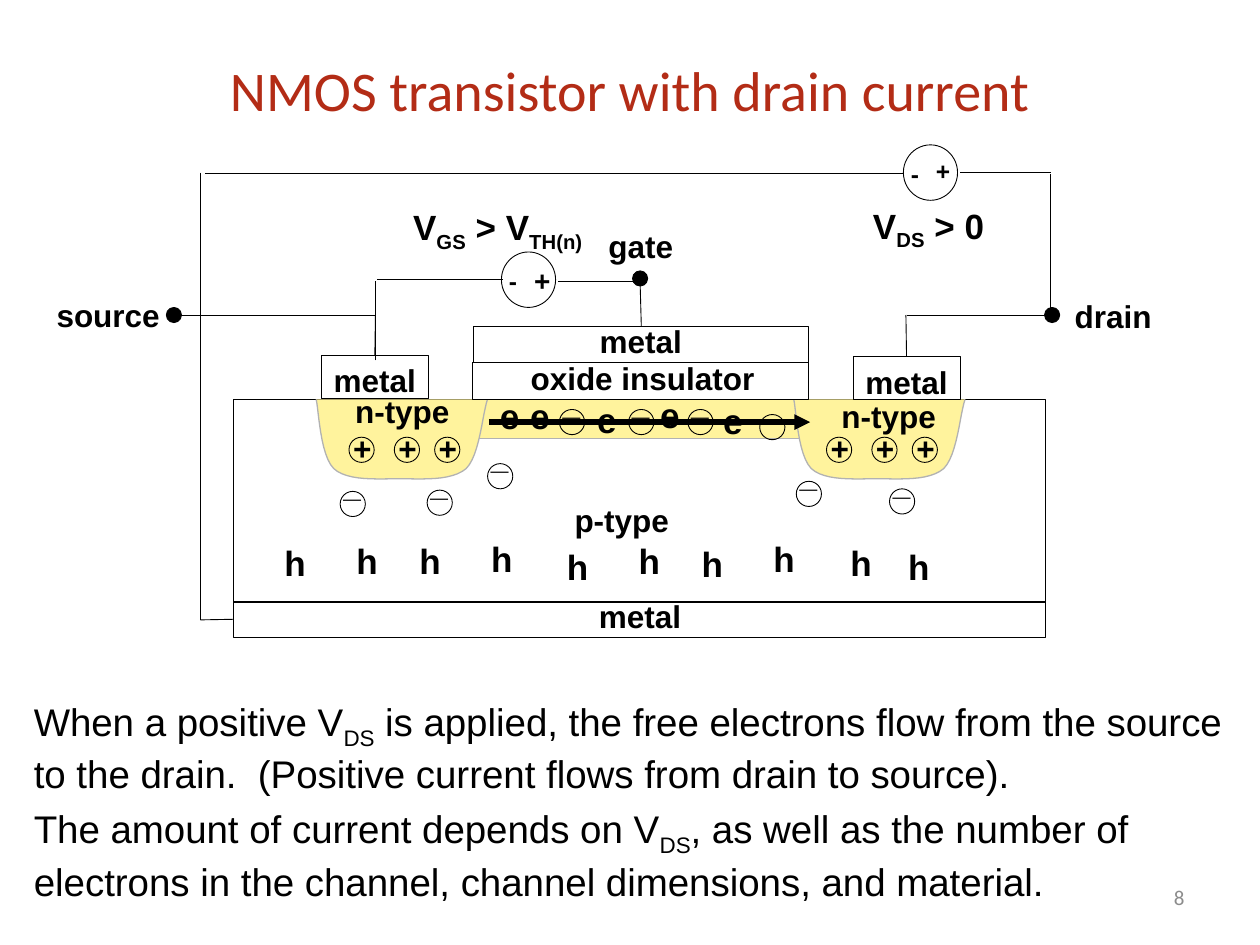
from dataclasses import dataclass

from lxml.etree import SubElement
from pptx import Presentation
from pptx.dml.color import RGBColor
from pptx.enum.shapes import MSO_CONNECTOR as Connector, MSO_SHAPE as Preset
from pptx.enum.text import MSO_ANCHOR as Anchor, PP_ALIGN as Align
from pptx.oxml.ns import qn
from pptx.util import Pt

PX = 9144  # EMU per px, 100 px to the inch


@dataclass(frozen=True)
class Theme:
    black: RGBColor = RGBColor(0, 0, 0)
    title: RGBColor = RGBColor(0xB3, 0x2C, 0x16)
    number: RGBColor = RGBColor(0x8C, 0x8C, 0x8C)
    n_region: RGBColor = RGBColor(0xFF, 0xF3, 0x9D)
    n_edge: RGBColor = RGBColor(0xB2, 0xB2, 0xB2)
    font: str = "Arial"
    heading_font: str = "Calibri"
    title_size: int = 32
    body_size: int = 22
    carrier_size: int = 20
    label_size: int = 18
    plus_size: int = 16
    sign_size: int = 14
    number_size: int = 12
    thin: float = 0.5
    edge: float = 0.75
    arrow: float = 3


theme = Theme()
presentation = Presentation()
presentation.slide_width = 1000 * PX
presentation.slide_height = 750 * PX
slide = presentation.slides.add_slide(presentation.slide_layouts[6])
shapes = slide.shapes


def add_text(text, left, top, width, height=40, size=theme.label_size, bold=True,
             color=theme.black, font=theme.font, align=Align.LEFT,
             anchor=Anchor.TOP, wrap=True, gap=0):
    """Add a text box; parts between ~ marks are subscripts, newlines split paragraphs."""
    frame = shapes.add_textbox(left * PX, top * PX, width * PX, height * PX).text_frame
    frame.word_wrap = wrap
    frame.vertical_anchor = anchor
    for row, content in enumerate(text.split("\n")):
        paragraph = frame.add_paragraph() if row else frame.paragraphs[0]
        paragraph.alignment = align
        paragraph.space_before = Pt(gap if row else 0)
        for index, part in enumerate(content.split("~")):
            run = paragraph.add_run()
            run.text = part
            run.font.name, run.font.size, run.font.bold = font, Pt(size), bold
            run.font.color.rgb = color
            if index % 2:
                run.font._element.set("baseline", "-25000")


def add_outline(preset, left, top, width, height, fill=None, line=theme.black):
    shape = shapes.add_shape(preset, left * PX, top * PX, width * PX, height * PX)
    shape.shadow.inherit = False
    if fill is None:
        shape.fill.background()
    else:
        shape.fill.solid()
        shape.fill.fore_color.rgb = fill
    shape.line.color.rgb = line
    shape.line.width = Pt(theme.thin)
    return shape


# Channel, substrate and the two n-type wells
add_outline(Preset.RECTANGLE, 378, 317, 272, 31, theme.n_region, theme.n_edge)
add_outline(Preset.RECTANGLE, 185, 317, 645, 161)

well_curves = [
    ((0, 0), (2, 8), (3, 44), (14, 55)),
    ((14, 55), (25, 65), (49, 63), (66, 63)),
    ((66, 63), (84, 63), (107, 65), (119, 55)),
    ((119, 55), (130, 44), (132, 11), (136, 0)),
]
STEPS = 12
for well_left in (251, 630):
    points = []
    for curve in well_curves:
        for step in range(1, STEPS + 1):
            t = step / STEPS
            weights = ((1 - t) ** 3, 3 * t * (1 - t) ** 2, 3 * t * t * (1 - t), t ** 3)
            x, y = (sum(w * p[axis] for w, p in zip(weights, curve)) for axis in (0, 1))
            points.append(((well_left + x) * PX, (317 + y) * PX))
    builder = shapes.build_freeform(well_left * PX, 317 * PX)
    builder.add_line_segments(points, close=False)
    well = builder.convert_to_shape()
    well.shadow.inherit = False
    well.fill.solid()
    well.fill.fore_color.rgb = theme.n_region
    well.line.color.rgb = theme.n_edge
    well.line.width = Pt(theme.edge)

# Contacts and layers
source_contact = add_outline(Preset.RECTANGLE, 255, 282, 85, 34)
drain_contact = add_outline(Preset.RECTANGLE, 677, 283, 85, 34)
add_outline(Preset.RECTANGLE, 375, 288, 267, 29)
gate_metal = add_outline(Preset.RECTANGLE, 376, 259, 266, 29)
body_metal = add_outline(Preset.RECTANGLE, 185, 477, 645, 29)

for label, left, top, width in [
    ("metal", 255, 282, 85), ("metal", 677, 283, 85), ("metal", 466, 251, 85),
    ("oxide insulator", 411, 280, 198), ("p-type", 446, 393, 95),
    ("metal", 443, 469, 130), ("gate", 459, 175, 99),
]:
    add_text(label, left, top, width, align=Align.CENTER, wrap=False)

for label, left, top, width in [
    ("n-type", 272, 306, 123), ("n-type", 658, 310, 123),
    ("source", 35, 230, 105), ("drain", 843, 231, 112),
]:
    add_text(label, left, top, width)

# Terminals
for left, top in [(829, 244), (132, 244), (502, 215)]:
    add_outline(Preset.OVAL, left, top, 12, 12, theme.black)

# Fixed ions: positive in the wells, negative in the substrate and channel
positive_ions = [(well + offset, 347) for well in (277, 656) for offset in (0, 36, 68)]
negative_ions = [(339, 389), (270, 390), (387, 368), (632, 382), (706, 388),
                 (603, 329), (444, 325), (499, 325), (546, 325)]
for sign, ions, shift, rise in [("+", positive_ions, 9, 11), ("_", negative_ions, 10, 25)]:
    for left, top in ions:
        add_outline(Preset.OVAL, left, top, 20, 20)
        add_text(sign, left - shift, top - rise, 39, align=Align.CENTER)

# Mobile carriers
holes = [(216, 425), (273, 423), (323, 423), (380, 422), (440, 428),
         (497, 423), (547, 426), (604, 422), (665, 425), (711, 428)]
electrons = [(387, 308), (411, 308), (464, 311), (514, 307), (564, 312)]
for letter, places in [("h", holes), ("e", electrons)]:
    for left, top in places:
        add_text(letter, left, top, 37, 43, size=theme.carrier_size, wrap=False)

# Voltage sources
for left, top, plus_top, plus_size in [(398, 200, 204, theme.plus_size),
                                       (717, 115, 119, theme.sign_size)]:
    add_outline(Preset.OVAL, left, top, 43, 44)
    add_text("-", left - 4, top + 6, 38, 33, size=theme.sign_size)
    add_text("+", left + 16, plus_top, 31, 35, size=plus_size)
add_text("V~GS~ > V~TH(n)~", 318, 158, 162, 43, size=theme.carrier_size, wrap=False)
add_text("V~DS~ > 0", 683, 157, 111, 43, size=theme.carrier_size, wrap=False)

# Wires; the last entry is the electron flow through the channel
for x1, y1, x2, y2, joined, site in [
    (298, 286, 298, 223, None, 0),
    (298, 249, 298, 282, source_contact, 0),
    (141, 250, 298, 250, None, 0),
    (159, 137, 159, 492, None, 0),
    (159, 492, 185, 492, body_metal, 1),
    (508, 223, 508, 259, gate_metal, 0),
    (719, 250, 719, 283, drain_contact, 0),
    (834, 250, 720, 250, None, 0),
    (399, 222, 299, 222, None, 0),
    (443, 223, 508, 223, None, 0),
    (834, 138, 834, 251, None, 0),
    (163, 138, 717, 138, None, 0),
    (762, 137, 834, 137, None, 0),
    (388, 335, 643, 335, None, 0),
]:
    wire = shapes.add_connector(Connector.STRAIGHT, x1 * PX, y1 * PX, x2 * PX, y2 * PX)
    wire.line.color.rgb = theme.black
    wire.line.width = Pt(theme.thin)
    if joined is not None:
        wire.end_connect(joined, site)
    SubElement(wire._element.spPr, qn("a:effectLst"))
electron_flow = wire
electron_flow.line.width = Pt(theme.arrow)
SubElement(electron_flow.line._get_or_add_ln(), qn("a:tailEnd"), type="triangle")

# Title, explanation and slide number
add_text("NMOS transistor with drain current", 50, 8, 900, 125, size=theme.title_size,
         bold=False, color=theme.title, font=theme.heading_font,
         align=Align.CENTER, anchor=Anchor.MIDDLE)
add_text("When a positive V~DS~ is applied, the free electrons flow from the source "
         "to the drain.  (Positive current flows from drain to source).\n"
         "The amount of current depends on V~DS~, as well as the number of electrons "
         "in the channel, channel dimensions, and material.",
         17, 549, 983, 166, size=theme.body_size, bold=False, gap=5)
add_text("8", 717, 692, 233, size=theme.number_size, bold=False, color=theme.number,
         font=theme.heading_font, align=Align.RIGHT, anchor=Anchor.MIDDLE)

presentation.save("out.pptx")
